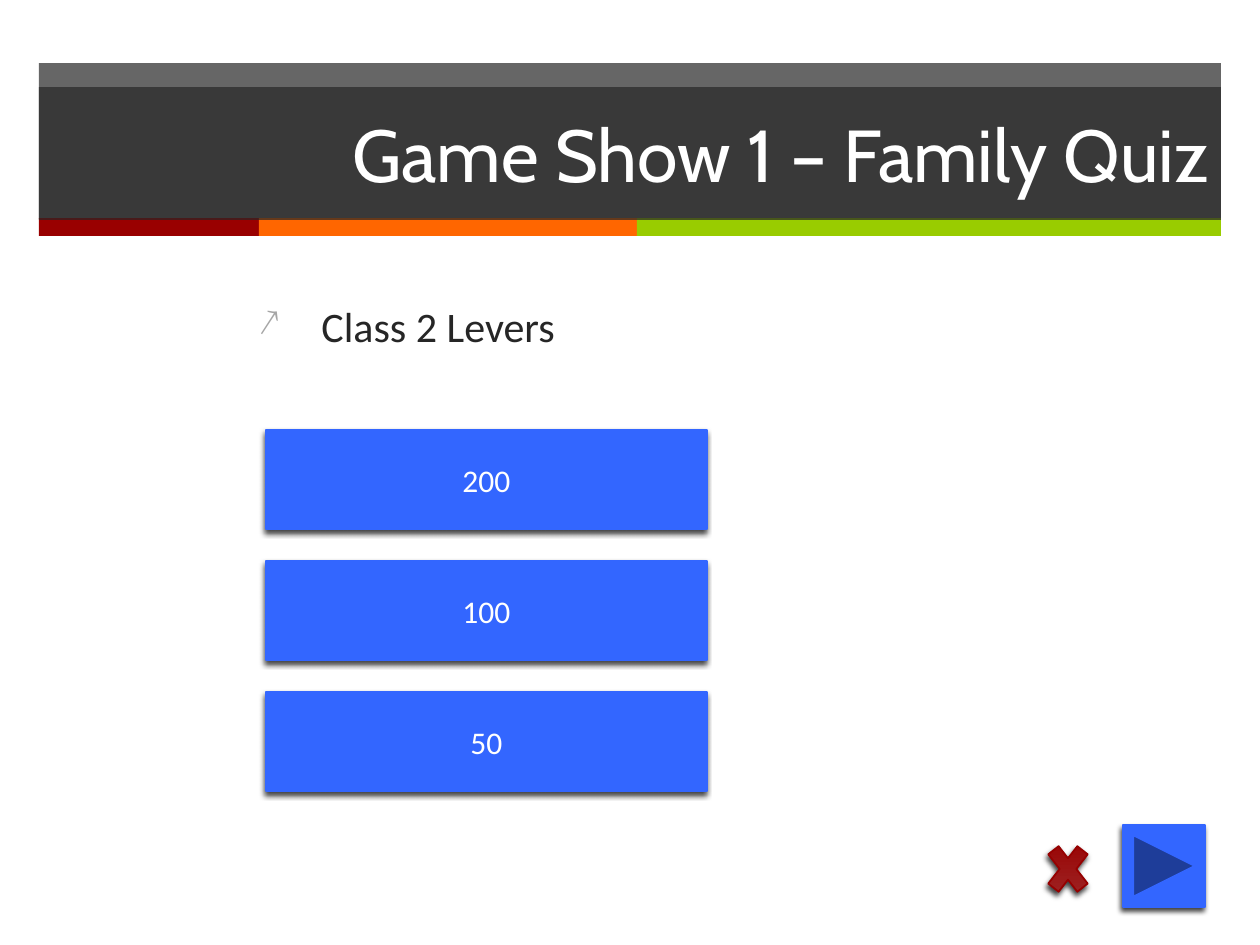
from lxml.etree import SubElement
from pptx import Presentation
from pptx.dml.color import RGBColor
from pptx.enum.shapes import MSO_SHAPE as Shape
from pptx.enum.text import MSO_ANCHOR as Anchor, PP_ALIGN as Align
from pptx.oxml.ns import qn
from pptx.util import Pt

PX = 914400 / 126


def px(length):
    return round(length * PX)


def color(code):
    return RGBColor.from_string(code)


def add_xml(parent, tag, **attributes):
    return SubElement(parent, qn(tag), {key: str(value) for key, value in attributes.items()})


class GameSlide:
    """Holds the style and the current slide, with a method for each kind of element."""

    HEAD, BODY = "Cabin", "Calibri"
    DARK, WHITE, BLUE, GRAY = "262626", "FFFFFF", "3366FF", "A6A6A6"

    def __init__(self, deck):
        self.page = deck.slides.add_slide(deck.slide_layouts[6])

    def add_span(self, para, text, size, font, ink):
        span = para.add_run()
        span.text = text
        span.font.size = Pt(size)
        span.font.name = font
        span.font.color.rgb = color(ink)

    def block(self, left, top, width, height, fill, kind=Shape.RECTANGLE):
        box = self.page.shapes.add_shape(kind, px(left), px(top), px(width), px(height))
        box.shadow.inherit = False
        box.fill.solid()
        box.fill.fore_color.rgb = color(fill)
        box.line.fill.background()
        return box

    def band(self, left, top, width, height):
        box = self.block(left, top, width, height, self.DARK)
        fill = box._element.spPr.find(qn("a:solidFill"))
        add_xml(fill[0], "a:alpha", val=70000)
        return box

    def title(self, text, *place):
        box = self.band(*place)
        frame = box.text_frame
        frame.word_wrap = True
        frame.vertical_anchor = Anchor.MIDDLE
        para = frame.paragraphs[0]
        para.alignment = Align.RIGHT
        self.add_span(para, text, 42, self.HEAD, self.WHITE)

    def bullet(self, text, left, top, width, height):
        box = self.page.shapes.add_textbox(px(left), px(top), px(width), px(height))
        frame = box.text_frame
        frame.word_wrap = True
        para = frame.paragraphs[0]
        para.space_before = Pt(20)
        self.add_span(para, text, 24, self.BODY, self.DARK)
        props = para._p.get_or_add_pPr()
        props.set("marL", str(px(63)))
        props.set("indent", str(px(-63)))
        add_xml(add_xml(props, "a:buClr"), "a:srgbClr", val=self.GRAY)
        add_xml(props, "a:buSzPct", val=90000)
        add_xml(props, "a:buChar", char="↗")

    def raised(self, left, top, width, height, kind=Shape.RECTANGLE, edge=BLUE):
        box = self.block(left, top, width, height, self.BLUE, kind)
        box.line.color.rgb = color(edge)
        box.line.width = Pt(1)
        effects = box._element.spPr.find(qn("a:effectLst"))
        shadow = add_xml(effects, "a:outerShdw", blurRad=Pt(3), dist=Pt(2),
                         dir=110 * 60000, rotWithShape=0)
        add_xml(add_xml(shadow, "a:srgbClr", val="000000"), "a:alpha", val=75000)
        return box

    def answer(self, text, *place):
        frame = self.raised(*place).text_frame
        frame.word_wrap = True
        frame.vertical_anchor = Anchor.MIDDLE
        para = frame.paragraphs[0]
        para.alignment = Align.CENTER
        self.add_span(para, text, 18, self.BODY, self.WHITE)

    def strike(self, *place):
        box = self.raised(*place, kind=Shape.MATH_MULTIPLY, edge="960000")
        box.fill.gradient()
        box.fill.gradient_angle = 90
        for stop, code, position in zip(box.fill.gradient_stops, ("9D2828", "990000"), (0, 1)):
            stop.color.rgb = color(code)
            stop.position = position


def main():
    deck = Presentation()
    deck.slide_width, deck.slide_height = px(1260), px(945)
    slide = GameSlide(deck)

    slide.band(39, 63, 1182, 156)
    left = 39
    for width, fill in ((220, "990000"), (378, "FF6600"), (584, "99CC00")):
        slide.block(left, 218, width, 18, fill)
        left += width
    slide.title("Game Show 1 – Family Quiz", 39, 87, 1182, 133)

    slide.bullet("Class 2 Levers", 246, 294, 975, 78)
    for row, points in enumerate(("200", "100", "50")):
        slide.answer(points, 266, 430 + 131 * row, 441, 99)
    slide.raised(1123, 825, 82, 82, kind=Shape.ACTION_BUTTON_FORWARD_OR_NEXT)
    slide.strike(1040, 833, 56, 72)

    deck.save("out.pptx")


if __name__ == "__main__":
    main()
